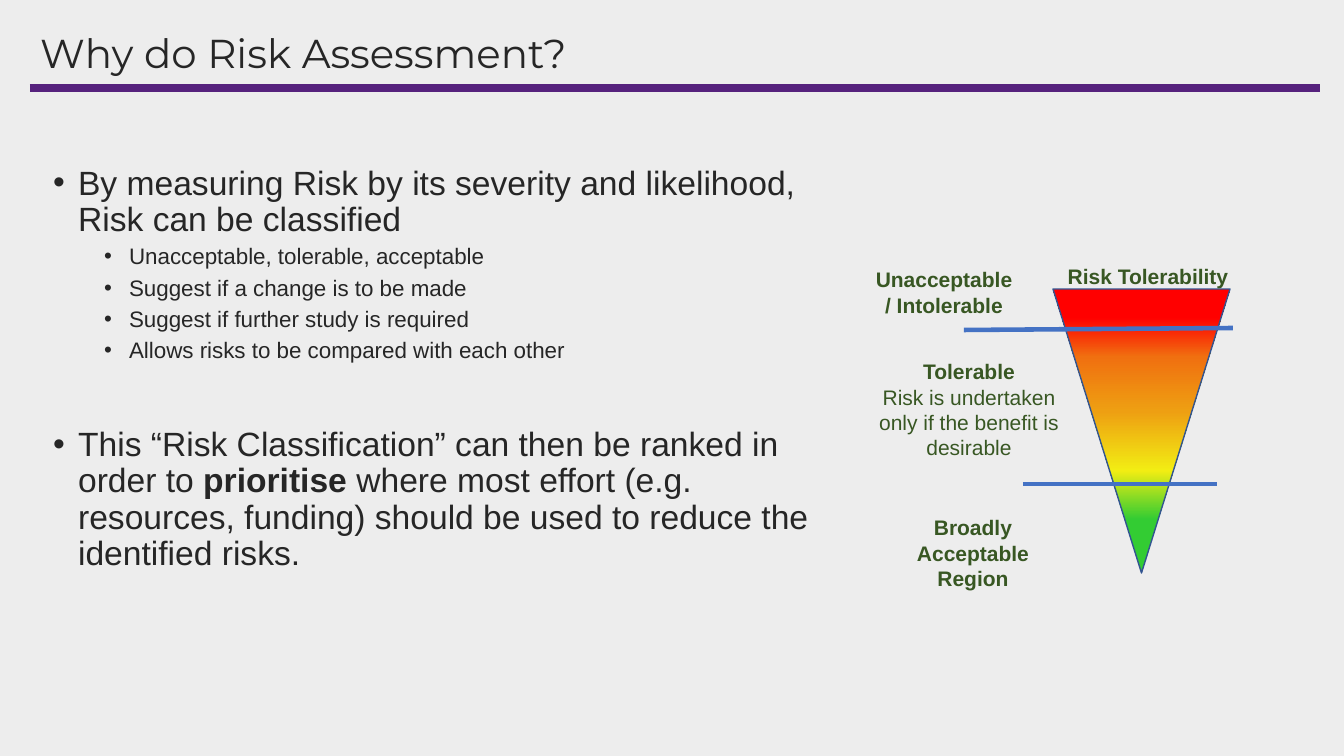
"""Build the risk assessment slide with its tolerability triangle."""
from lxml import etree
from pptx import Presentation
from pptx.dml.color import RGBColor
from pptx.enum.shapes import MSO_CONNECTOR, MSO_SHAPE
from pptx.enum.text import MSO_ANCHOR, MSO_AUTO_SIZE, PP_ALIGN
from pptx.oxml.ns import qn
from pptx.util import Emu, Pt

LEFT, CENTER = PP_ALIGN.LEFT, PP_ALIGN.CENTER
TOP, MIDDLE = MSO_ANCHOR.TOP, MSO_ANCHOR.MIDDLE
NO_AUTOFIT = MSO_AUTO_SIZE.NONE
STRAIGHT = MSO_CONNECTOR.STRAIGHT
TRIANGLE = MSO_SHAPE.ISOSCELES_TRIANGLE

BACKGROUND, INK, LABEL_GREEN = "EDEDED", "262626", "385723"
PURPLE, BLUE, OUTLINE = "56227D", "4472C4", "325491"

TITLE = "Why do Risk Assessment?"
TITLE_BOX = (30, 28, 1290, 54)
BODY_BOX = (43, 161, 809, 470)
POINTS = [
    (0, 0, [("By measuring Risk by its severity and likelihood, Risk can be classified", False)]),
    (1, 5, [("Unacceptable, tolerable, acceptable", False)]),
    (1, 5, [("Suggest if a change is to be made", False)]),
    (1, 5, [("Suggest if further study is required", False)]),
    (1, 5, [("Allows risks to be compared with each other", False)]),
    (0, 46, [
        ("This “Risk Classification” can then be ranked in order to ", False),
        ("prioritise", True),
        (" where most effort (e.g. resources, funding) should be used to reduce the "
         "identified risks.", False),
    ]),
]
LEVEL_SIZES = (24, 16)
LEVEL_INDENTS = (25, 76)
HANGING = 25

RISK_TRIANGLE = (1053, 289, 177, 284)
RISK_STOPS = [(19, "33CC33"), (36, "F2ED13"), (57, "EE9F12"), (76, "F07010"), (90, "FF0000")]
LABELS = [
    ((865, 262, 158, 61), [("Unacceptable / Intolerable", True)]),
    ((866, 354, 206, 112), [("Tolerable", True),
                            ("Risk is undertaken only if the benefit is desirable", False)]),
    ((877, 510, 192, 61), [("Broadly Acceptable Region", True)]),
    ((1045, 259, 206, 35), [("Risk Tolerability", True)]),
]
RULES = [
    ((30, 88, 1320, 88), PURPLE, 6),
    ((1023, 484, 1217, 484), BLUE, 3.25),
    ((964, 330, 1233, 328), BLUE, 3.25),
]


def px(length):
    return Emu(round(length * 914400 / 100.8))


def rgb(hex_colour):
    return RGBColor.from_string(hex_colour)


def place(part, box):
    part.left, part.top, part.width, part.height = map(px, box)


def add_bullet(paragraph, indent):
    properties = paragraph._p.get_or_add_pPr()
    properties.set("marL", str(px(indent)))
    properties.set("indent", str(-px(HANGING)))
    etree.SubElement(properties, qn("a:buFont"), typeface="Arial")
    etree.SubElement(properties, qn("a:buChar"), char="•")


def write(frame, paragraphs, sizes, colour, font="Arial", align=LEFT,
          anchor=TOP, line_spacing=1.0, bullets=False):
    frame.word_wrap = True
    frame.auto_size = NO_AUTOFIT
    frame.vertical_anchor = anchor
    for number, (level, space_before, runs) in enumerate(paragraphs):
        paragraph = frame.add_paragraph() if number else frame.paragraphs[0]
        paragraph.level = level
        paragraph.alignment = align
        paragraph.line_spacing = line_spacing
        paragraph.space_before = Pt(space_before)
        if bullets:
            add_bullet(paragraph, LEVEL_INDENTS[level])
        for words, bold in runs:
            run = paragraph.add_run()
            run.text = words
            run.font.name = font
            run.font.size = Pt(sizes[level])
            run.font.bold = bold
            run.font.color.rgb = rgb(colour)


def add_rule(slide, ends, colour, width):
    rule = slide.shapes.add_connector(STRAIGHT, *map(px, ends))
    rule.line.color.rgb = rgb(colour)
    rule.line.width = Pt(width)
    etree.SubElement(rule._element.spPr, qn("a:effectLst"))


def add_risk_triangle(slide):
    triangle = slide.shapes.add_shape(TRIANGLE, *map(px, RISK_TRIANGLE))
    triangle.rotation = 180
    triangle.shadow.inherit = False
    triangle.line.color.rgb = rgb(OUTLINE)
    triangle.line.width = Pt(1)
    triangle.fill.gradient()
    triangle.fill.gradient_angle = 270
    stops = triangle._element.spPr.find(".//" + qn("a:gsLst"))
    for stop in list(stops):
        stops.remove(stop)
    for percent, colour in RISK_STOPS:
        stop = etree.SubElement(stops, qn("a:gs"), pos=str(percent * 1000))
        etree.SubElement(stop, qn("a:srgbClr"), val=colour)


def main():
    deck = Presentation()
    deck.slide_width, deck.slide_height = px(1344), px(756)
    slide = deck.slides.add_slide(deck.slide_layouts[1])
    slide.background.fill.solid()
    slide.background.fill.fore_color.rgb = rgb(BACKGROUND)

    title, body = slide.placeholders
    place(title, TITLE_BOX)
    write(title.text_frame, [(0, 0, [(TITLE, False)])], (28.8,), INK,
          font="Montserrat", anchor=MIDDLE, line_spacing=0.9)
    place(body, BODY_BOX)
    write(body.text_frame, POINTS, LEVEL_SIZES, INK, line_spacing=0.9, bullets=True)

    add_risk_triangle(slide)
    for ends, colour, width in RULES:
        add_rule(slide, ends, colour, width)
    for box, lines in LABELS:
        label = slide.shapes.add_textbox(*map(px, box))
        write(label.text_frame, [(0, 0, [line]) for line in lines], (15,),
              LABEL_GREEN, align=CENTER)
    deck.save("out.pptx")


if __name__ == "__main__":
    main()
